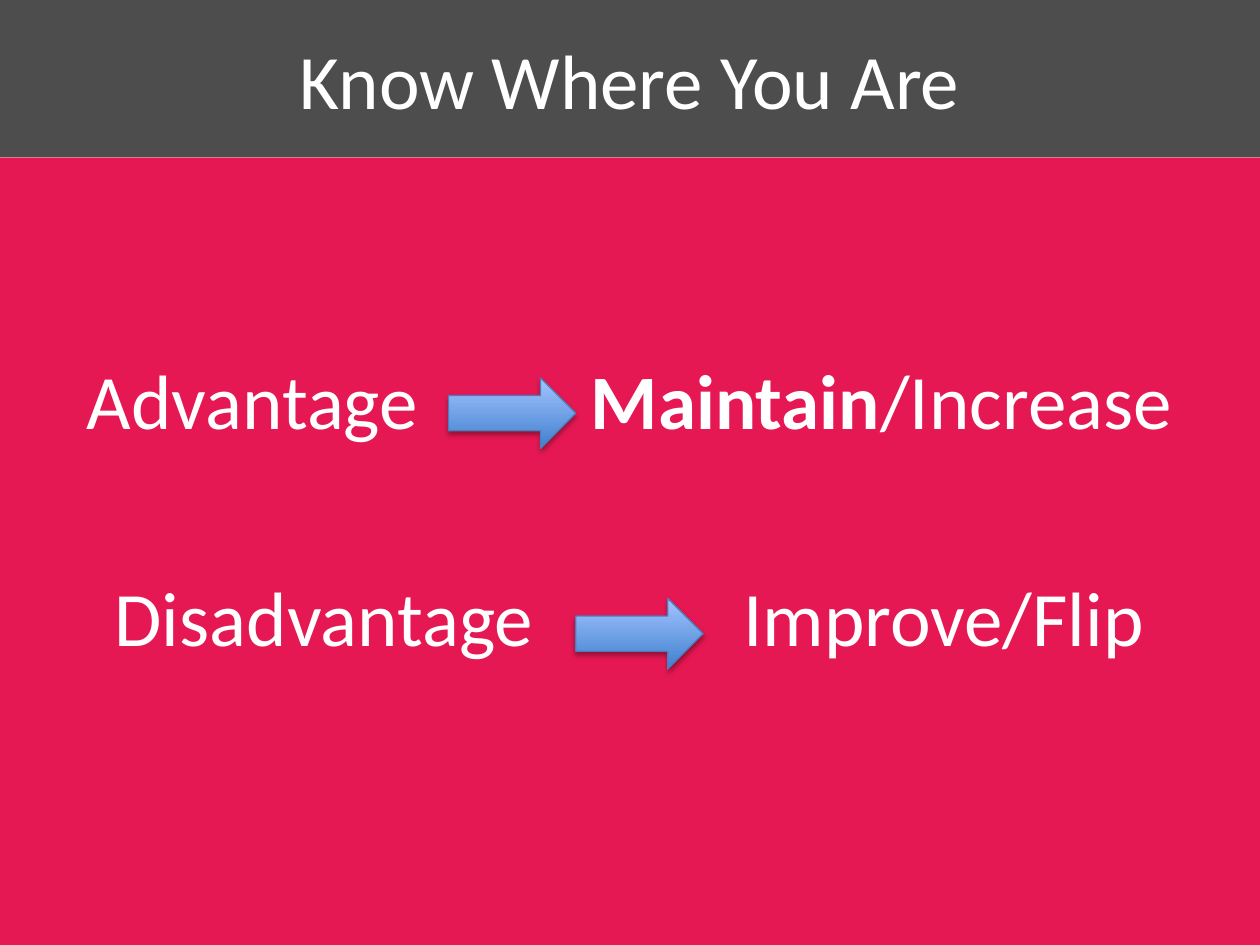
import pptx
import pptx.util
import pptx.dml.color
import pptx.enum.shapes
import pptx.enum.text
import pptx.oxml.ns
from lxml import etree

Inches, Pt = pptx.util.Inches, pptx.util.Pt
RGBColor = pptx.dml.color.RGBColor
ALIGN = pptx.enum.text.PP_ALIGN
ANCHOR = pptx.enum.text.MSO_ANCHOR
qn = pptx.oxml.ns.qn

GREY = RGBColor(0x4D, 0x4D, 0x4D)
CRIMSON = RGBColor(0xE6, 0x18, 0x53)
WHITE = RGBColor(0xFF, 0xFF, 0xFF)
ARROW_DARK = RGBColor(0x3F, 0x80, 0xCE)
ARROW_LIGHT = RGBColor(0xA4, 0xC4, 0xFF)
ARROW_EDGE = RGBColor(0x4B, 0x7E, 0xBC)

WIDTH, HEIGHT = 10, 7.5
HEADER = HEIGHT / 6
OUTCOME_LEFT = 4.69
ROW_GAP = 71
ARROW_WIDTH, ARROW_HEIGHT = 1.01, 0.56

# Each list entry: indent in inches, then (text, bold) parts
POSITIONS = [
    (0.69, [("Advantage", False)]),
    (0.91, [("Disadvantage", False)]),
]
OUTCOMES = [
    (0, [("Maintain", True), ("/Increase", False)]),
    (1.21, [("Improve/Flip", False)]),
]
ARROWS = [(3.56, 3), (4.57, 4.75)]


def write(paragraph, text, size=44, bold=False, color=WHITE, font="Calibri"):
    run = paragraph.add_run()
    run.text = text
    run.font.size = Pt(size)
    run.font.bold = bold
    run.font.name = font
    run.font.color.rgb = color


def place_panel(panel, left, top, height, anchor, color=None):
    """Stretch a placeholder to the right edge, as a band if coloured."""
    panel.left, panel.top = Inches(left), Inches(top)
    panel.width, panel.height = Inches(WIDTH - left), Inches(height)
    if color is None:
        panel.fill.background()
    else:
        panel.fill.solid()
        panel.fill.fore_color.rgb = color
    frame = panel.text_frame
    frame.auto_size = pptx.enum.text.MSO_AUTO_SIZE.NONE
    frame.vertical_anchor = anchor
    return frame


def fill_list(frame, entries):
    """Write unbulleted lines, each with its own indent."""
    frame.margin_left = frame.margin_right = 0
    frame.margin_top = Inches(1.55)
    for index, (indent, parts) in enumerate(entries):
        line = frame.add_paragraph() if index else frame.paragraphs[0]
        line.alignment = ALIGN.LEFT
        line.space_before = Pt(ROW_GAP if index else 0)
        properties = line._p.get_or_add_pPr()
        properties.set("marL", str(Inches(indent)))
        properties.set("indent", "0")
        etree.SubElement(properties, qn("a:buNone"))
        for text, bold in parts:
            write(line, text, bold=bold)


def add_arrow(slide, left, top):
    arrow = slide.shapes.add_shape(
        pptx.enum.shapes.MSO_SHAPE.RIGHT_ARROW, Inches(left), Inches(top),
        Inches(ARROW_WIDTH), Inches(ARROW_HEIGHT))
    arrow.fill.gradient()
    arrow.fill.gradient_angle = 90
    for stop, color in zip(arrow.fill.gradient_stops, (ARROW_DARK, ARROW_LIGHT)):
        stop.color.rgb = color
    arrow.line.color.rgb = ARROW_EDGE
    arrow.line.width = Pt(0.75)
    # Soft shadow straight below
    arrow.shadow.inherit = False
    effects = arrow._element.spPr.find(qn("a:effectLst"))
    shadow = etree.SubElement(effects, qn("a:outerShdw"), blurRad=str(Pt(3.1)),
                              dist=str(Pt(1.8)), dir="5400000", rotWithShape="0")
    black = etree.SubElement(shadow, qn("a:srgbClr"), val="000000")
    etree.SubElement(black, qn("a:alpha"), val="35000")


def main():
    deck = pptx.Presentation()
    deck.slide_width, deck.slide_height = Inches(WIDTH), Inches(HEIGHT)
    # Layout with a title and two lists
    slide = deck.slides.add_slide(deck.slide_layouts[3])
    title, positions, outcomes = slide.placeholders

    # Header band
    heading = place_panel(title, 0, 0, HEADER, ANCHOR.MIDDLE, GREY).paragraphs[0]
    heading.alignment = ALIGN.CENTER
    write(heading, "Know Where You Are")

    # Positions on the left, what to do about each on the right
    below = HEIGHT - HEADER
    fill_list(place_panel(positions, 0, HEADER, below, ANCHOR.TOP, CRIMSON), POSITIONS)
    fill_list(place_panel(outcomes, OUTCOME_LEFT, HEADER, below, ANCHOR.TOP), OUTCOMES)

    # Arrows between them
    for left, top in ARROWS:
        add_arrow(slide, left, top)

    deck.save("out.pptx")


if __name__ == "__main__":
    main()
